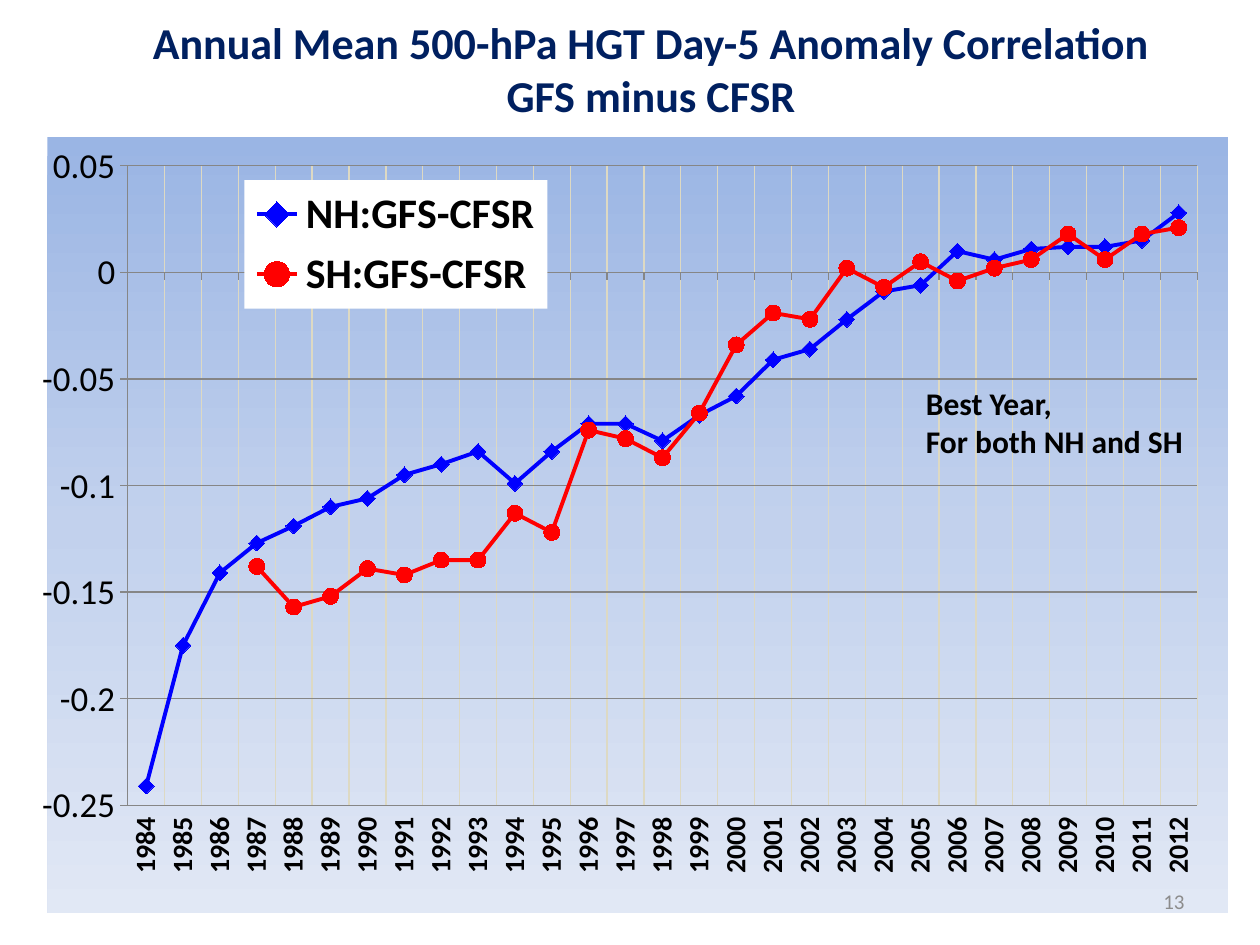
from pptx import Presentation
from pptx.chart.data import CategoryChartData
from pptx.dml.color import RGBColor
from pptx.enum.chart import (XL_CHART_TYPE, XL_LEGEND_POSITION, XL_MARKER_STYLE,
                             XL_TICK_LABEL_POSITION, XL_TICK_MARK)
from pptx.enum.text import MSO_ANCHOR, PP_ALIGN
from pptx.oxml import parse_xml
from pptx.oxml.ns import nsdecls, qn
from pptx.util import Pt

LINE_MARKERS = XL_CHART_TYPE.LINE_MARKERS
LEGEND_RIGHT = XL_LEGEND_POSITION.RIGHT
DIAMOND, CIRCLE = XL_MARKER_STYLE.DIAMOND, XL_MARKER_STYLE.CIRCLE
LABELS_LOW = XL_TICK_LABEL_POSITION.LOW
OUTSIDE, NO_TICK = XL_TICK_MARK.OUTSIDE, XL_TICK_MARK.NONE
MIDDLE, TOP = MSO_ANCHOR.MIDDLE, MSO_ANCHOR.TOP
LEFT, CENTER, RIGHT = PP_ALIGN.LEFT, PP_ALIGN.CENTER, PP_ALIGN.RIGHT

FONT = "Calibri"
NAVY = RGBColor(0x00, 0x20, 0x60)
BLACK = RGBColor(0x00, 0x00, 0x00)
WHITE = RGBColor(0xFF, 0xFF, 0xFF)
GRAY = RGBColor(0x8C, 0x8C, 0x8C)
AXIS_GRAY = RGBColor(0x86, 0x86, 0x86)
SAND = RGBColor(0xDD, 0xD9, 0xC3)
BLUE = RGBColor(0x00, 0x00, 0xFF)
RED = RGBColor(0xFF, 0x00, 0x00)
SKY = RGBColor(0x9A, 0xB5, 0xE4)
PALE_SKY = RGBColor(0xC2, 0xD1, 0xED)
MIST = RGBColor(0xE1, 0xE8, 0xF5)

CHART_W, CHART_H = 678, 444
YEARS = [str(year) for year in range(1984, 2013)]
NORTH = [-0.241, -0.175, -0.141, -0.127, -0.119, -0.11, -0.106, -0.095, -0.09, -0.084,
         -0.099, -0.084, -0.071, -0.071, -0.079, -0.067, -0.058, -0.041, -0.036, -0.022,
         -0.009, -0.006, 0.01, 0.006, 0.011, 0.012, 0.012, 0.015, 0.028]
SOUTH = [None, None, None, -0.138, -0.157, -0.152, -0.139, -0.142, -0.135, -0.135,
         -0.113, -0.122, -0.074, -0.078, -0.087, -0.066, -0.034, -0.019, -0.022, 0.002,
         -0.007, 0.005, -0.004, 0.002, 0.006, 0.018, 0.006, 0.018, 0.021]
# name, values, colour, marker
SERIES = [("NH:GFS-CFSR", NORTH, BLUE, DIAMOND),
          ("SH:GFS-CFSR", SOUTH, RED, CIRCLE)]


def set_font(font, size, color=BLACK, bold=False):
    font.name, font.size, font.bold = FONT, Pt(size), bold
    font.color.rgb = color


def fill_text(tf, text, size, color, bold=False, align=LEFT, anchor=TOP):
    tf.text = text
    tf.word_wrap = True
    tf.vertical_anchor = anchor
    for p in tf.paragraphs:
        p.alignment = align
        set_font(p.font, size, color, bold)


def add_title(s, text):
    sp = s.shapes.title
    sp.left, sp.top, sp.width, sp.height = Pt(48), Pt(12), Pt(648), Pt(54)
    fill_text(sp.text_frame, text, 25.2, NAVY, True, CENTER, MIDDLE)


def add_text(s, box, text, size, color, **style):
    sp = s.shapes.add_textbox(*(Pt(v) for v in box))
    fill_text(sp.text_frame, text, size, color, **style)


def place(element, x, y, w, h, inner=False):
    """Fix the plot area or legend at a place given in points within the chart."""
    for old in element.findall(qn("c:layout")):
        element.remove(old)
    target = '<c:layoutTarget val="inner"/>' if inner else ""
    layout = parse_xml(
        f'<c:layout {nsdecls("c")}><c:manualLayout>{target}'
        '<c:xMode val="edge"/><c:yMode val="edge"/>'
        f'<c:x val="{x / CHART_W}"/><c:y val="{y / CHART_H}"/>'
        f'<c:w val="{w / CHART_W}"/><c:h val="{h / CHART_H}"/>'
        '</c:manualLayout></c:layout>')
    if inner:
        element.insert(0, layout)
    else:
        element.find(qn("c:legendPos")).addnext(layout)


def fill_chart_area(chart, stops):
    gs = "".join(f'<a:gs pos="{pos * 1000}"><a:srgbClr val="{color}"/></a:gs>'
                 for pos, color in stops)
    chart._chartSpace.chart.addnext(parse_xml(
        f'<c:spPr {nsdecls("c", "a")}><a:gradFill><a:gsLst>{gs}</a:gsLst>'
        '<a:lin ang="5400000" scaled="0"/></a:gradFill><a:ln><a:noFill/></a:ln></c:spPr>'))


def fill_legend(legend, color):
    legend._element.find(qn("c:txPr")).addprevious(parse_xml(
        f'<c:spPr {nsdecls("c", "a")}><a:solidFill>'
        f'<a:srgbClr val="{color}"/></a:solidFill></c:spPr>'))


def turn_labels_upright(axis):
    body = axis._element.find(qn("c:txPr")).find(qn("a:bodyPr"))
    body.set("rot", "-5400000")
    body.set("vert", "horz")


def format_axis(axis, size, grid_color, bold=False):
    axis.major_tick_mark, axis.minor_tick_mark = OUTSIDE, NO_TICK
    set_font(axis.tick_labels.font, size, bold=bold)
    axis.has_major_gridlines = True
    for line, color in ((axis.major_gridlines.format.line, grid_color),
                        (axis.format.line, AXIS_GRAY)):
        line.color.rgb = color
        line.width = Pt(0.75)


def format_series(series, color, marker):
    series.smooth = False
    series.format.line.color.rgb = color
    series.format.line.width = Pt(2.25)
    series.marker.style, series.marker.size = marker, 9
    series.marker.format.fill.solid()
    series.marker.format.fill.fore_color.rgb = color
    series.marker.format.line.color.rgb = color


def add_line_chart(s):
    data = CategoryChartData()
    data.categories = YEARS
    for name, values, _, _ in SERIES:
        data.add_series(name, values)
    chart = s.shapes.add_chart(LINE_MARKERS, Pt(24), Pt(78), Pt(CHART_W), Pt(CHART_H),
                               data).chart
    chart.has_title = False
    set_font(chart.font, 18)
    fill_chart_area(chart, [(0, SKY), (50, PALE_SKY), (100, MIST)])
    place(chart._chartSpace.chart.plotArea, 46.1, 16.8, 614, 365.4, inner=True)

    # Axes
    format_axis(chart.category_axis, 16, SAND, bold=True)
    chart.category_axis.tick_label_position = LABELS_LOW
    turn_labels_upright(chart.category_axis)
    format_axis(chart.value_axis, 20, AXIS_GRAY)
    chart.value_axis.minimum_scale = -0.25
    chart.value_axis.maximum_scale = 0.05
    chart.value_axis.major_unit = 0.05

    # Series
    chart.plots[0].vary_by_categories = False
    for series, (_, _, color, marker) in zip(chart.plots[0].series, SERIES):
        format_series(series, color, marker)

    # Legend
    chart.has_legend = True
    chart.legend.position = LEGEND_RIGHT
    chart.legend.include_in_layout = False
    set_font(chart.legend.font, 24, bold=True)
    fill_legend(chart.legend, WHITE)
    place(chart.legend._element, 113, 25, 174, 73.4)


def main():
    prs = Presentation()
    prs.slide_width, prs.slide_height = Pt(720), Pt(540)
    s = prs.slides.add_slide(prs.slide_layouts[5])
    add_title(s, "Annual Mean 500-hPa HGT Day-5 Anomaly Correlation\vGFS minus CFSR")
    add_line_chart(s)
    # Note and slide number
    add_text(s, (522, 216, 162, 51), "Best Year,\nFor both NH and SH", 18, BLACK, bold=True)
    add_text(s, (516, 500.5, 168, 29), "13", 12, GRAY, align=RIGHT, anchor=MIDDLE)
    prs.save("out.pptx")


if __name__ == "__main__":
    main()
